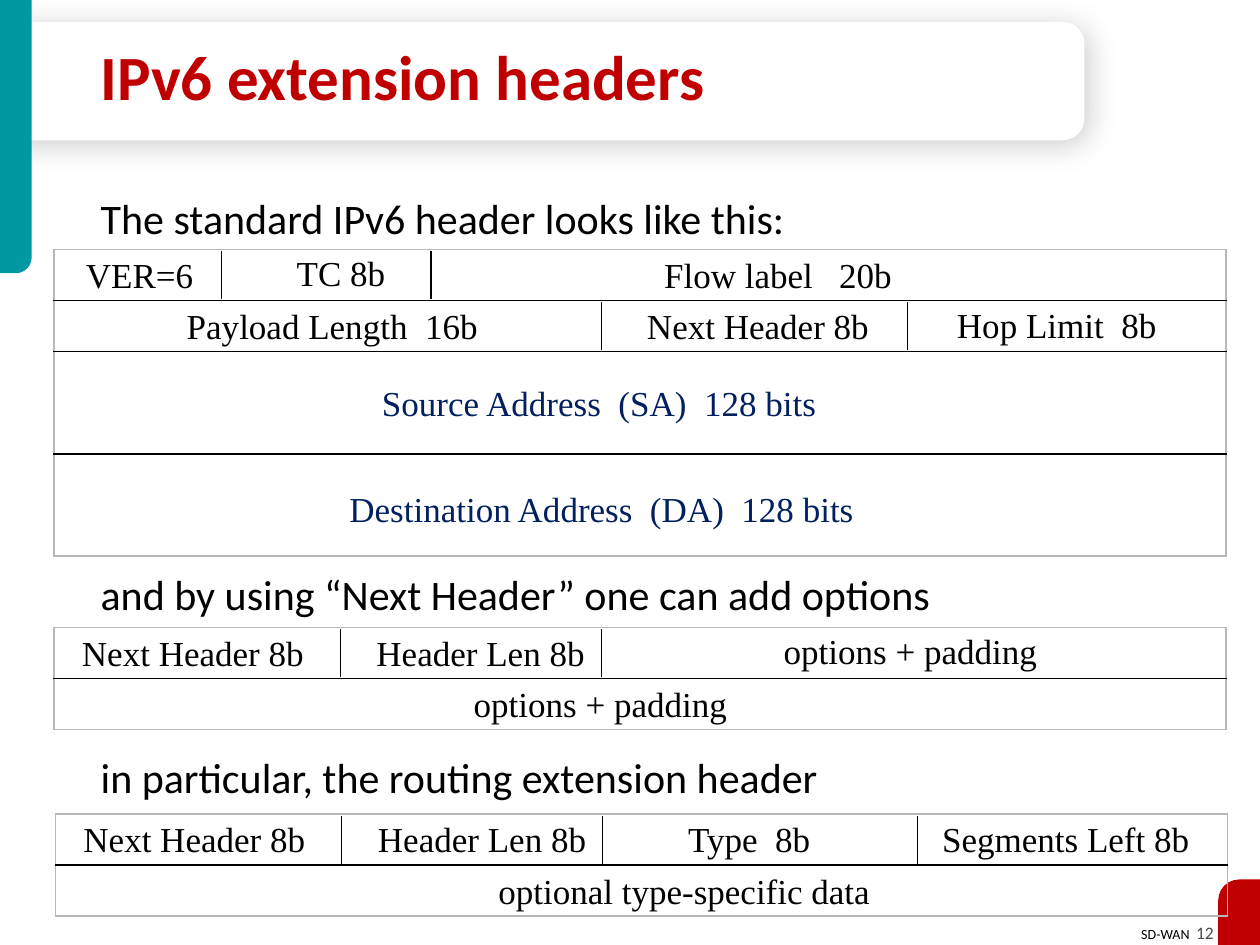
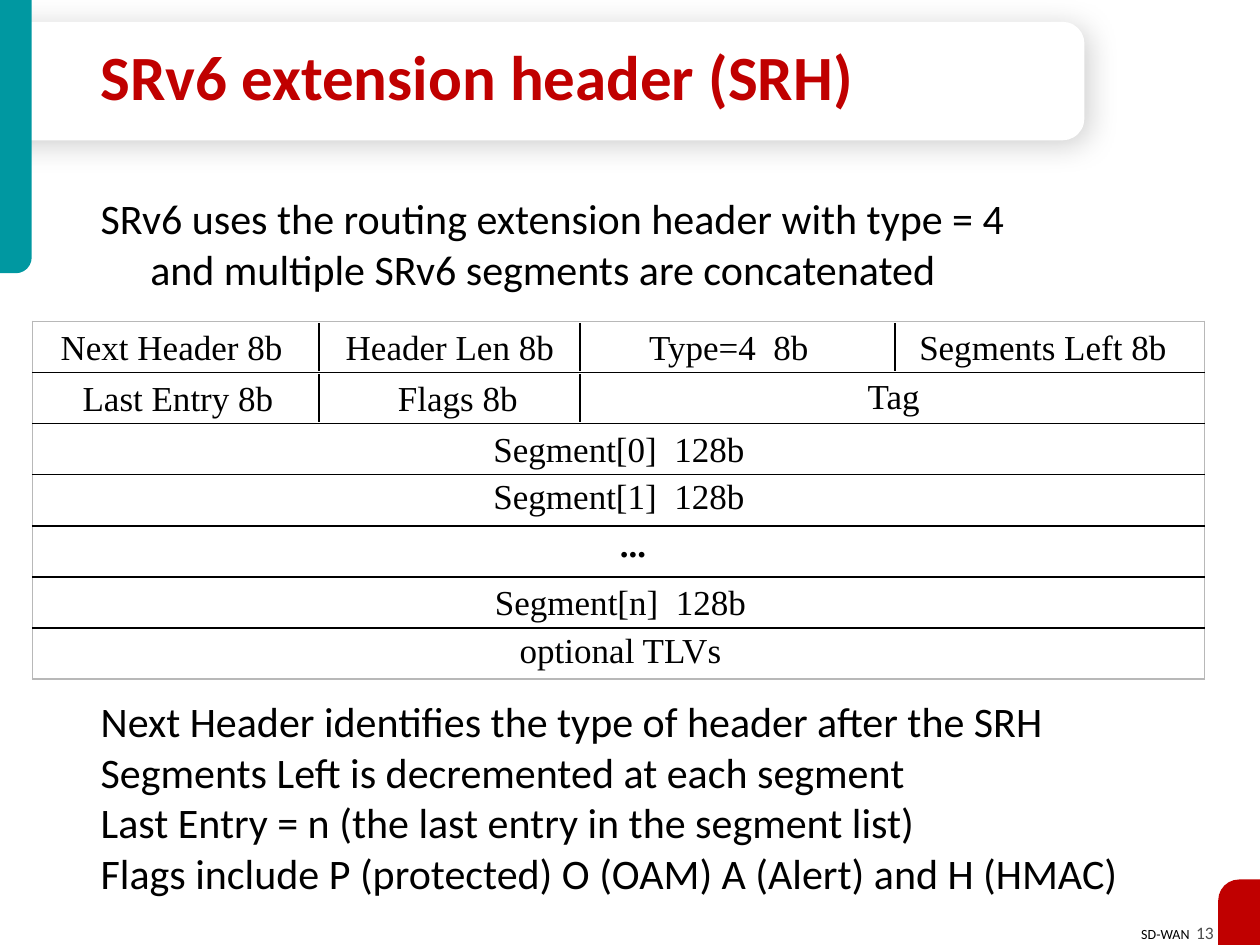
from dataclasses import dataclass, field

from lxml.etree import SubElement
from pptx import Presentation
from pptx.dml.color import RGBColor
from pptx.enum.shapes import MSO_CONNECTOR, MSO_SHAPE
from pptx.enum.text import MSO_ANCHOR, MSO_AUTO_SIZE, PP_ALIGN
from pptx.oxml.ns import qn
from pptx.util import Cm, Pt


@dataclass(frozen=True)
class Theme:
    white: str = "FFFFFF"
    black: str = "000000"
    red: str = "C00000"
    teal: str = "0098A1"
    navy: str = "002060"
    number_gray: str = "4D4D4D"
    frame_gray: str = "B8B8B8"
    sans: str = "Calibri"
    serif: str = "Times New Roman"
    title_size: float = 36
    body_size: float = 24
    body_line: float = 28.8
    field_size: float = 20
    footer_size: float = 8
    number_size: float = 10
    border: float = 1
    divider: float = 0.75


THEME = Theme()
TABLE_WIDTH = 23.62
ROW_HEIGHT = 1.03
LABEL_HEIGHT = 1.12


@dataclass(frozen=True)
class Field:
    text: str
    left: float
    width: float
    nudge: float = 0
    color: str = THEME.black
    bold: bool = False


@dataclass(frozen=True)
class Row:
    fields: list
    dividers: list = field(default_factory=list)
    height: float = ROW_HEIGHT


@dataclass(frozen=True)
class Statement:
    text: str
    gap: float = 0
    indent: float = 0


class HeaderDeck:
    def __init__(self, theme):
        self.theme = theme
        self.presentation = Presentation()
        self.presentation.slide_width = Cm(25.4)
        self.presentation.slide_height = Cm(19.05)
        self.slide = None

    def add_slide(self, title, number):
        layout = self.presentation.slide_layouts.get_by_name("Title Only")
        self.slide = self.presentation.slides.add_slide(layout)
        self.slide.background.fill.solid()
        self.slide.background.fill.fore_color.rgb = RGBColor.from_string(self.theme.white)
        self.add_footer(number)
        self.add_title_band()
        strip = self.add_filled(MSO_SHAPE.ROUND_1_RECTANGLE, (0, 0, 0.64, 5.51), self.theme.teal, [0.5])
        strip.element.spPr.get_or_add_xfrm().set("flipV", "1")
        corner = self.add_filled(
            MSO_SHAPE.ROUND_1_RECTANGLE, (24.56, 17.73, 0.84, 1.32), self.theme.red, [0.5])
        corner.element.spPr.get_or_add_xfrm().set("flipH", "1")
        self.add_title(title)

    def style_run(self, run, size, color, font, bold=False):
        run.font.size = Pt(size)
        run.font.name = font
        run.font.bold = bold
        run.font.color.rgb = RGBColor.from_string(color)

    def add_filled(self, kind, box, color, adjustments):
        shape = self.slide.shapes.add_shape(kind, *map(Cm, box))
        shape.shadow.inherit = False
        shape.fill.solid()
        shape.fill.fore_color.rgb = RGBColor.from_string(color)
        shape.line.fill.background()
        for index, value in enumerate(adjustments):
            shape.adjustments[index] = value
        return shape

    def add_title_band(self):
        band = self.add_filled(
            MSO_SHAPE.ROUND_2_SAME_RECTANGLE, (9.73, -9.3, 2.39, 21.87), self.theme.white, [0.184, 0])
        band.rotation = 90
        effects = band.element.spPr.find(qn("a:effectLst"))
        shadow = SubElement(
            effects, qn("a:outerShdw"), blurRad=str(Pt(17)), dist=str(Pt(3)),
            dir="2700000", algn="ctr", rotWithShape="0")
        color = SubElement(shadow, qn("a:srgbClr"), val=self.theme.black)
        SubElement(color, qn("a:alpha"), val="19000")

    def add_title(self, text):
        title = self.slide.shapes.title
        self.slide.shapes.element.append(title.element)
        title.left, title.top, title.width, title.height = map(Cm, (1.78, 0.74, 18.8, 1.8))
        frame = title.text_frame
        frame.text = text
        frame.auto_size = MSO_AUTO_SIZE.NONE
        frame.vertical_anchor = MSO_ANCHOR.MIDDLE
        paragraph = frame.paragraphs[0]
        paragraph.alignment = PP_ALIGN.LEFT
        paragraph.line_spacing = 0.85
        self.style_run(paragraph.runs[0], self.theme.title_size, self.theme.red, self.theme.sans, True)

    def add_footer(self, number):
        box = self.slide.shapes.add_textbox(*map(Cm, (22.66, 18.47, 2.06, 0.69)))
        box.text_frame.word_wrap = False
        box.text_frame.auto_size = MSO_AUTO_SIZE.SHAPE_TO_FIT_TEXT
        paragraph = box.text_frame.paragraphs[0]
        paragraph.alignment = PP_ALIGN.RIGHT
        for text, size, color in (
            ("SD-WAN  ", self.theme.footer_size, self.theme.black),
            (str(number), self.theme.number_size, self.theme.number_gray),
        ):
            run = paragraph.add_run()
            run.text = text
            self.style_run(run, size, color, self.theme.sans)

    def add_body(self, statements):
        box = self.slide.shapes.add_textbox(*map(Cm, (1.78, 3.76, 22.53, 14.25)))
        frame = box.text_frame
        frame.word_wrap = True
        frame.text = "\n".join(statement.text for statement in statements)
        for paragraph, statement in zip(frame.paragraphs, statements):
            paragraph.space_before = Pt(statement.gap)
            paragraph.line_spacing = Pt(self.theme.body_line)
            if statement.indent:
                paragraph._p.get_or_add_pPr().set("marL", str(Cm(statement.indent)))
            self.style_run(paragraph.runs[0], self.theme.body_size, self.theme.black, self.theme.sans)

    def set_borders(self, cell, colors):
        properties = cell._tc.get_or_add_tcPr()
        for index, (side, color) in enumerate(colors.items()):
            line = properties.makeelement(qn(f"a:{side}"), {"w": str(Pt(self.theme.border))})
            properties.insert(index, line)
            SubElement(SubElement(line, qn("a:solidFill")), qn("a:srgbClr"), val=color)

    def add_grid(self, left, top, rows):
        heights = [row.height for row in rows]
        frame = self.slide.shapes.add_table(
            len(rows), 1, *map(Cm, (left, top, TABLE_WIDTH, sum(heights))))
        table = frame.table
        table.first_row = False
        table.horz_banding = False
        outer, inner = self.theme.frame_gray, self.theme.black
        for index, height in enumerate(heights):
            table.rows[index].height = Cm(height)
            cell = table.cell(index, 0)
            cell.margin_top = cell.margin_bottom = 0
            cell.fill.background()
            self.set_borders(cell, {
                "lnL": outer,
                "lnR": outer,
                "lnT": inner if index else outer,
                "lnB": inner if index < len(rows) - 1 else outer,
            })

    def add_divider(self, x, top):
        line = self.slide.shapes.add_connector(
            MSO_CONNECTOR.STRAIGHT, Cm(x), Cm(top + 0.03), Cm(x), Cm(top + 1))
        line.line.color.rgb = RGBColor.from_string(self.theme.black)
        line.line.width = Pt(self.theme.divider)
        SubElement(line.element.spPr, qn("a:effectLst"))

    def add_label(self, label, left, middle):
        top = middle - LABEL_HEIGHT / 2 + label.nudge
        box = self.slide.shapes.add_textbox(
            *map(Cm, (left + label.left, top, label.width, LABEL_HEIGHT)))
        frame = box.text_frame
        frame.word_wrap = True
        frame.auto_size = MSO_AUTO_SIZE.SHAPE_TO_FIT_TEXT
        frame.text = label.text
        paragraph = frame.paragraphs[0]
        paragraph.alignment = PP_ALIGN.CENTER
        self.style_run(
            paragraph.runs[0], self.theme.field_size, label.color, self.theme.serif, label.bold)

    def add_header(self, left, top, rows):
        self.add_grid(left, top, rows)
        for row in rows:
            for x in row.dividers:
                self.add_divider(left + x, top)
            for label in row.fields:
                self.add_label(label, left, top + row.height / 2)
            top += row.height


NEXT_HEADER = Field("Next Header 8b", 0.3, 5)
HEADER_LENGTH = Field("Header Len 8b", 4.64, 7.92)
SEGMENTS_LEFT = Field("Segments Left 8b", 17.38, 5.97)
ROUTING_DIVIDERS = [5.77, 11.03, 17.38]

IPV6_HEADER = [
    Row([Field("VER=6", 0.33, 2.79), Field("TC 8b", 4.02, 3.53, -0.03),
         Field("Flow label   20b", 11.61, 5.97)], [3.38, 7.6]),
    Row([Field("Payload Length  16b", 1.65, 7.92), Field("Next Header 8b", 11.69, 5),
         Field("Hop Limit  8b", 17.55, 5.33, -0.03)], [11.04, 17.2]),
    Row([Field("Source Address  (SA)  128 bits", 5.59, 10.8, color=THEME.navy)],
        height=2 * ROW_HEIGHT),
    Row([Field("Destination Address  (DA)  128 bits", 5.64, 10.8, 0.09, THEME.navy)],
        height=2 * ROW_HEIGHT),
]

OPTIONS_HEADER = [
    Row([NEXT_HEADER, HEADER_LENGTH, Field("options + padding", 14.28, 5.97, -0.04)],
        ROUTING_DIVIDERS[:2]),
    Row([Field("options + padding", 8.03, 5.97)]),
]

ROUTING_HEADER = [
    Row([NEXT_HEADER, HEADER_LENGTH, Field("Type  8b", 11, 5.97), SEGMENTS_LEFT], ROUTING_DIVIDERS),
    Row([Field("optional type-specific data", 8, 9.35)]),
]

SEGMENT_ROUTING_HEADER = [
    Row([NEXT_HEADER, Field("Header Len 8b", 4.45, 7.92), Field("Type=4  8b", 11.05, 5.97),
         SEGMENTS_LEFT], ROUTING_DIVIDERS),
    Row([Field("Last Entry 8b", 0.43, 5), Field("Flags 8b", 6.07, 5),
         Field("Tag", 12.68, 9.35, -0.05)], ROUTING_DIVIDERS[:2]),
    Row([Field("Segment[0]  128b", 8.15, 7.34)]),
    Row([Field("Segment[1]  128b", 8.15, 7.34, -0.08)]),
    Row([Field("...", 8.43, 7.34, -0.15, bold=True)]),
    Row([Field("Segment[n]  128b", 8.18, 7.34)]),
    Row([Field("optional TLVs", 8.18, 7.34, -0.06)]),
]


def main():
    deck = HeaderDeck(THEME)

    deck.add_slide("IPv6 extension headers", 12)
    deck.add_body([
        Statement("The standard IPv6 header looks like this:"),
        Statement("and by using “Next Header” one can add options", gap=186),
        Statement("in particular, the routing extension header", gap=76),
    ])
    deck.add_header(1.09, 5.03, IPV6_HEADER)
    deck.add_header(1.09, 12.65, OPTIONS_HEADER)
    deck.add_header(1.12, 16.41, ROUTING_HEADER)

    deck.add_slide("SRv6 extension header (SRH)", 13)
    deck.add_body([
        Statement("SRv6 uses the routing extension header with type = 4"),
        Statement("and multiple SRv6 segments are concatenated", indent=1),
        Statement("Next Header identifies the type of header after the SRH", gap=230),
        Statement("Segments Left is decremented at each segment"),
        Statement("Last Entry = n (the last entry in the segment list)"),
        Statement("Flags include P (protected) O (OAM) A (Alert) and H (HMAC)"),
    ])
    deck.add_header(0.66, 6.48, SEGMENT_ROUTING_HEADER)

    deck.presentation.save("out.pptx")


if __name__ == "__main__":
    main()
